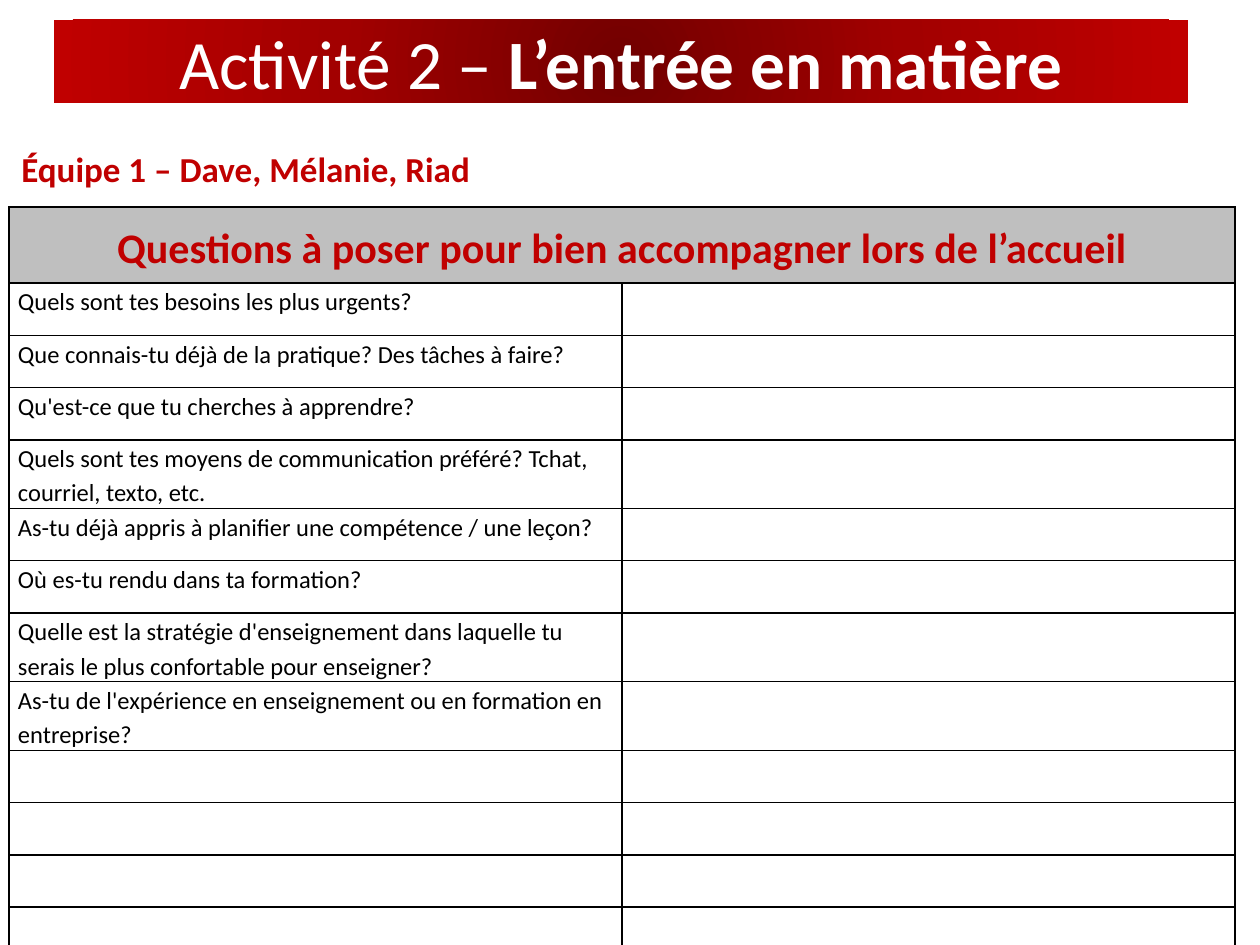
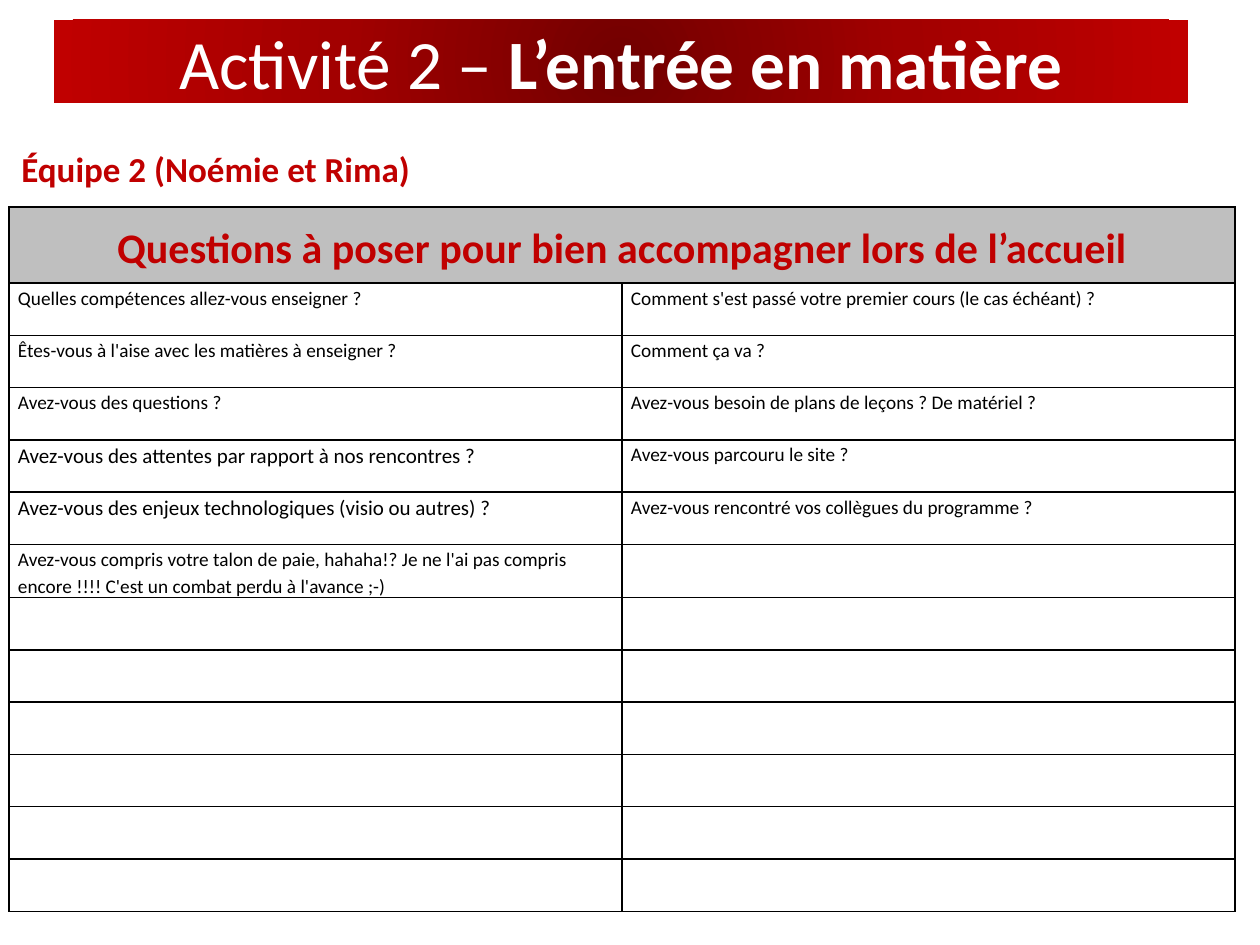
from pptx import Presentation
from pptx.dml.color import RGBColor
from pptx.enum.shapes import MSO_SHAPE
from pptx.enum.text import MSO_ANCHOR, PP_ALIGN
from pptx.oxml import parse_xml
from pptx.oxml.ns import nsdecls
from pptx.util import Pt

SCALE = 914400 / 126
FONT = "Calibri"
COLORS = {
    "red": "C00000",
    "mid": "A20000",
    "dark": "720000",
    "gray": "BFBFBF",
    "white": "FFFFFF",
    "black": "000000",
}
TITLE = ("Activité 2 – ", "L’entrée en matière")
HEADING = "Questions à poser pour bien accompagner lors de l’accueil"
ROWS = 12
TITLE_BOX = (54, 20, 1134, 83)
TEAM_BOX = (9, 141, 605, 55)
TABLE_BOX = (9, 207, 1226, 704)
HEAD = 76

TEAMS = [
    ("Équipe 1 – Dave, Mélanie, Riad", [
        (14, "Quels sont tes besoins les plus urgents?"),
        (14, "Que connais-tu déjà de la pratique? Des tâches à faire?"),
        (14, "Qu'est-ce que tu cherches à apprendre?"),
        (14, "Quels sont tes moyens de communication préféré? Tchat, courriel, texto, etc."),
        (14, "As-tu déjà appris à planifier une compétence / une leçon?"),
        (14, "Où es-tu rendu dans ta formation?"),
        (14, "Quelle est la stratégie d'enseignement dans laquelle tu "
             "serais le plus confortable pour enseigner?"),
        (14, "As-tu de l'expérience en enseignement ou en formation en entreprise?"),
    ], []),
    ("Équipe 2 (Noémie et Rima)", [
        (11, "Quelles compétences allez-vous enseigner ?"),
        (11, "Êtes-vous à l'aise avec les matières à enseigner ?"),
        (11, "Avez-vous des questions ?"),
        (12, "Avez-vous des attentes par rapport à nos rencontres ?"),
        (12, "Avez-vous des enjeux technologiques (visio ou autres) ?"),
        (11, "Avez-vous compris votre talon de paie, hahaha!? Je ne l'ai pas compris "
             "encore !!!! C'est un combat perdu à l'avance ;-)"),
    ], [
        (11, "Comment s'est passé votre premier cours (le cas échéant) ?"),
        (11, "Comment ça va ?"),
        (11, "Avez-vous besoin de plans de leçons ? De matériel ?"),
        (11, "Avez-vous parcouru le site ?"),
        (11, "Avez-vous rencontré vos collègues du programme ?"),
    ]),
]


def px(count):
    """Turn pixels into EMU."""
    return round(count * SCALE)


def style(run, size, color, bold=False):
    """Set the font of a run."""
    font = run.font
    font.name, font.size, font.bold = FONT, Pt(size), bold
    font.color.rgb = RGBColor.from_string(COLORS[color])


def add_title(slide, box):
    """Draw the title band with its radial gradient."""
    band = slide.shapes.add_shape(MSO_SHAPE.RECTANGLE, *map(px, box))
    band.shadow.inherit = False
    stops = "".join(
        f'<a:gs pos="{pos}"><a:srgbClr val="{COLORS[name]}"/></a:gs>'
        for pos, name in ((0, "dark"), (50000, "mid"), (100000, "red")))
    band._element.spPr.insert(2, parse_xml(
        f'<a:gradFill {nsdecls("a")} rotWithShape="1"><a:gsLst>{stops}</a:gsLst>'
        '<a:path path="circle"><a:fillToRect l="50000" t="50000" r="50000" b="50000"/>'
        '</a:path></a:gradFill>'))
    band.line.fill.background()
    frame = band.text_frame
    frame.word_wrap = True
    frame.vertical_anchor = MSO_ANCHOR.MIDDLE
    para = frame.paragraphs[0]
    para.alignment = PP_ALIGN.CENTER
    for text, bold in zip(TITLE, (False, True)):
        run = para.add_run()
        run.text = text
        style(run, 39.6, "white", bold)


def add_team(slide, box, name):
    """Write the team line."""
    frame = slide.shapes.add_textbox(*map(px, box)).text_frame
    frame.word_wrap = True
    frame.text = name
    style(frame.paragraphs[0].runs[0], 20, "red", True)


def format_cell(cell, fill):
    """Give a cell its margins, borders and fill."""
    cell.margin_left = cell.margin_right = px(9)
    cell.margin_top = cell.margin_bottom = 0
    props = cell._tc.get_or_add_tcPr()
    for side in "LRTB":
        props.append(parse_xml(
            f'<a:ln{side} {nsdecls("a")} w="12700"><a:solidFill>'
            f'<a:srgbClr val="{COLORS["black"]}"/></a:solidFill></a:ln{side}>'))
    cell.fill.solid()
    cell.fill.fore_color.rgb = RGBColor.from_string(COLORS[fill])


def write_cell(cell, text, size, color, bold=False):
    """Write spaced text in a cell."""
    cell.text_frame.text = text
    para = cell.text_frame.paragraphs[0]
    para.line_spacing, para.space_after = 1.15, Pt(10)
    style(para.runs[0], size, color, bold)


def add_table(slide, box, columns):
    """Draw the question table under its merged heading."""
    left, top, width, height = box
    table = slide.shapes.add_table(ROWS + 1, 2, *map(px, box)).table
    table.first_row = table.horz_banding = False
    for col in table.columns:
        col.width = px(width) // 2
    for index, row in enumerate(table.rows):
        row.height = px((height - HEAD) / ROWS) if index else px(HEAD)
        for cell in row.cells:
            format_cell(cell, "white" if index else "gray")
    head = table.cell(0, 0)
    head.merge(table.cell(0, 1))
    head.vertical_anchor = MSO_ANCHOR.MIDDLE
    write_cell(head, HEADING, 24, "red", True)
    head.text_frame.paragraphs[0].alignment = PP_ALIGN.CENTER
    for col, entries in enumerate(columns):
        for row, (size, text) in enumerate(entries, 1):
            write_cell(table.cell(row, col), text, size, "black")


def add_page(deck, name, *columns):
    """Add the slide of one team."""
    slide = deck.slides.add_slide(deck.slide_layouts[6])
    add_title(slide, TITLE_BOX)
    add_table(slide, TABLE_BOX, columns)
    add_team(slide, TEAM_BOX, name)


def main():
    """Build and save the deck."""
    deck = Presentation()
    deck.slide_width, deck.slide_height = px(1260), px(945)
    for team in TEAMS:
        add_page(deck, *team)
    deck.save("out.pptx")


if __name__ == "__main__":
    main()
